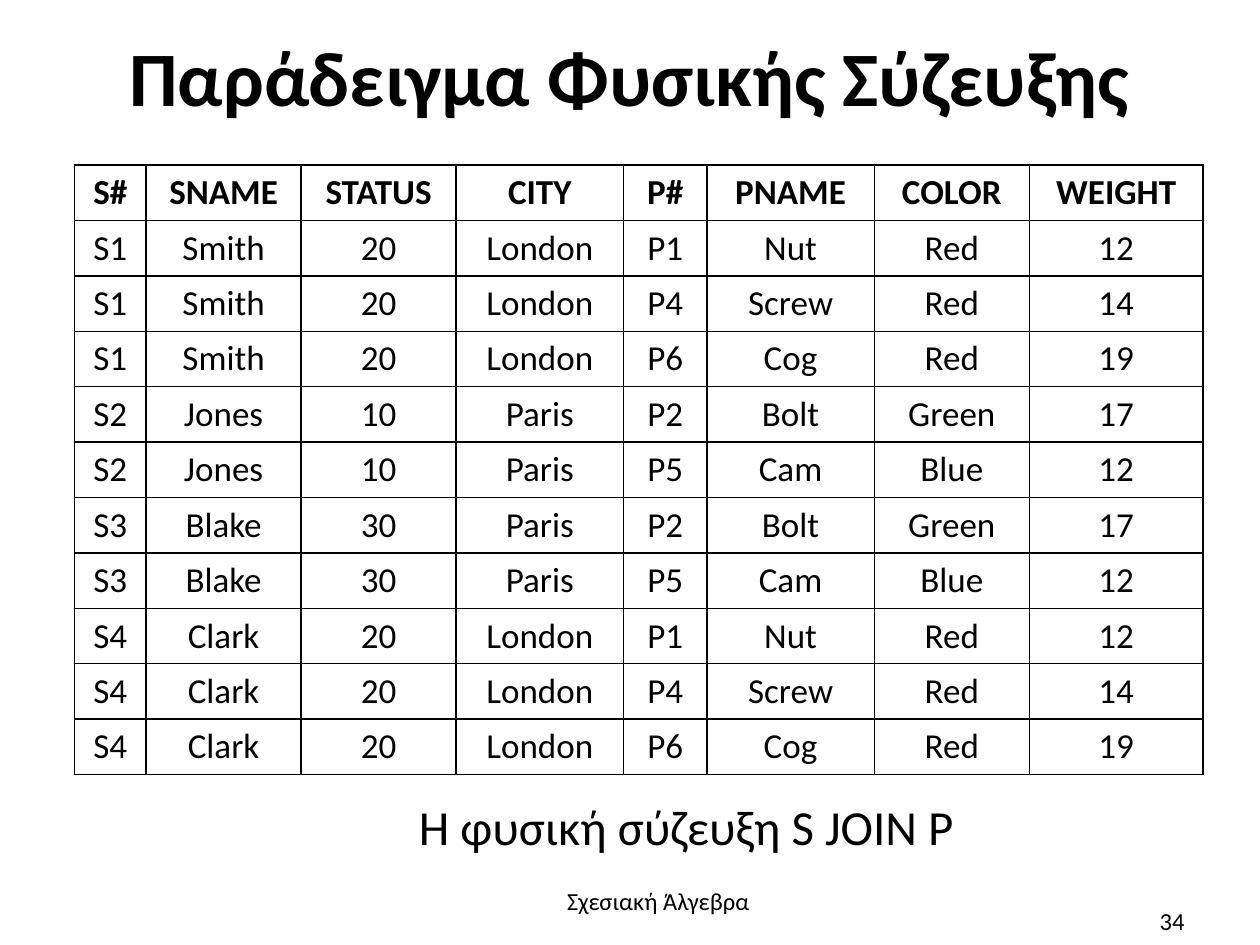
from lxml import etree
from pptx import Presentation
from pptx.dml.color import RGBColor
from pptx.enum import text
from pptx.oxml.ns import qn
from pptx.util import Inches, Pt

FONT = "Calibri"
BLACK = "000000"
WHITE = "FFFFFF"
HEADINGS = ["S#", "SNAME", "STATUS", "CITY", "P#", "PNAME", "COLOR", "WEIGHT"]
COLUMN_WIDTHS = [0.57, 1.23, 1.23, 1.33, 0.66, 1.33, 1.23, 1.38]
ROW_HEIGHT = 0.44
SUPPLIERS = [
    ("S1", "Smith", "20", "London"),
    ("S2", "Jones", "10", "Paris"),
    ("S3", "Blake", "30", "Paris"),
    ("S4", "Clark", "20", "London"),
]
PARTS_BY_CITY = {
    "London": [
        ("P1", "Nut", "Red", "12"),
        ("P4", "Screw", "Red", "14"),
        ("P6", "Cog", "Red", "19"),
    ],
    "Paris": [
        ("P2", "Bolt", "Green", "17"),
        ("P5", "Cam", "Blue", "12"),
    ],
}


def color(value):
    """Turn a hex string into a colour."""
    return RGBColor.from_string(value)


def write(frame, words, size, bold=False, align=text.PP_ALIGN.CENTER):
    """Put one styled paragraph into a text frame."""
    paragraph = frame.paragraphs[0]
    paragraph.text = words
    paragraph.alignment = align
    paragraph.font.name = FONT
    paragraph.font.size = Pt(size)
    paragraph.font.bold = bold
    paragraph.font.color.rgb = color(BLACK)


def add_label(slide, box, words, size, anchor=text.MSO_ANCHOR.MIDDLE, **style):
    """Add a wrapped text box at left, top, width, height in inches."""
    frame = slide.shapes.add_textbox(*map(Inches, box)).text_frame
    frame.word_wrap = True
    frame.vertical_anchor = anchor
    write(frame, words, size, **style)


def add_borders(cell, line_color, width):
    """Draw a solid line on all four sides of a cell."""
    properties = cell._tc.get_or_add_tcPr()
    for position, side in enumerate(("a:lnL", "a:lnR", "a:lnT", "a:lnB")):
        border = etree.Element(qn(side), w=str(Pt(width)))
        fill = etree.SubElement(border, qn("a:solidFill"))
        etree.SubElement(fill, qn("a:srgbClr"), val=line_color)
        properties.insert(position, border)


def natural_join():
    """Pair every supplier with the parts of the same city."""
    return [
        supplier + part
        for supplier in SUPPLIERS
        for part in PARTS_BY_CITY[supplier[3]]
    ]


def add_join_table(slide, left, top):
    """Add the table with the headings and the joined rows."""
    rows = [HEADINGS] + natural_join()
    table = slide.shapes.add_table(
        len(rows), len(HEADINGS), Inches(left), Inches(top),
        Inches(sum(COLUMN_WIDTHS)), Inches(ROW_HEIGHT * len(rows)),
    ).table
    table.horz_banding = False
    for column, width in zip(table.columns, COLUMN_WIDTHS):
        column.width = Inches(width)
    for row_index, values in enumerate(rows):
        for column_index, value in enumerate(values):
            cell = table.cell(row_index, column_index)
            cell.fill.solid()
            cell.fill.fore_color.rgb = color(WHITE)
            add_borders(cell, BLACK, 1)
            write(cell.text_frame, value, 20, bold=row_index == 0)


def main():
    """Build the slide and save it."""
    deck = Presentation()
    deck.slide_width, deck.slide_height = Inches(10), Inches(7.5)
    slide = deck.slides.add_slide(deck.slide_layouts[6])
    add_label(slide, (0.51, 0.05, 8.98, 1.1), "Παράδειγμα Φυσικής Σύζευξης", 44, bold=True)
    add_join_table(slide, 0.59, 1.31)
    add_label(slide, (3.11, 6.27, 4.67, 0.57), "Η φυσική σύζευξη S JOIN P", 28)
    add_label(slide, (3.48, 6.98, 3.49, 0.55), "Σχεσιακή Άλγεβρα", 14,
              anchor=text.MSO_ANCHOR.TOP)
    add_label(slide, (7.17, 7.11, 2.33, 0.4), "34", 14, align=text.PP_ALIGN.RIGHT)
    deck.save("out.pptx")


if __name__ == "__main__":
    main()
